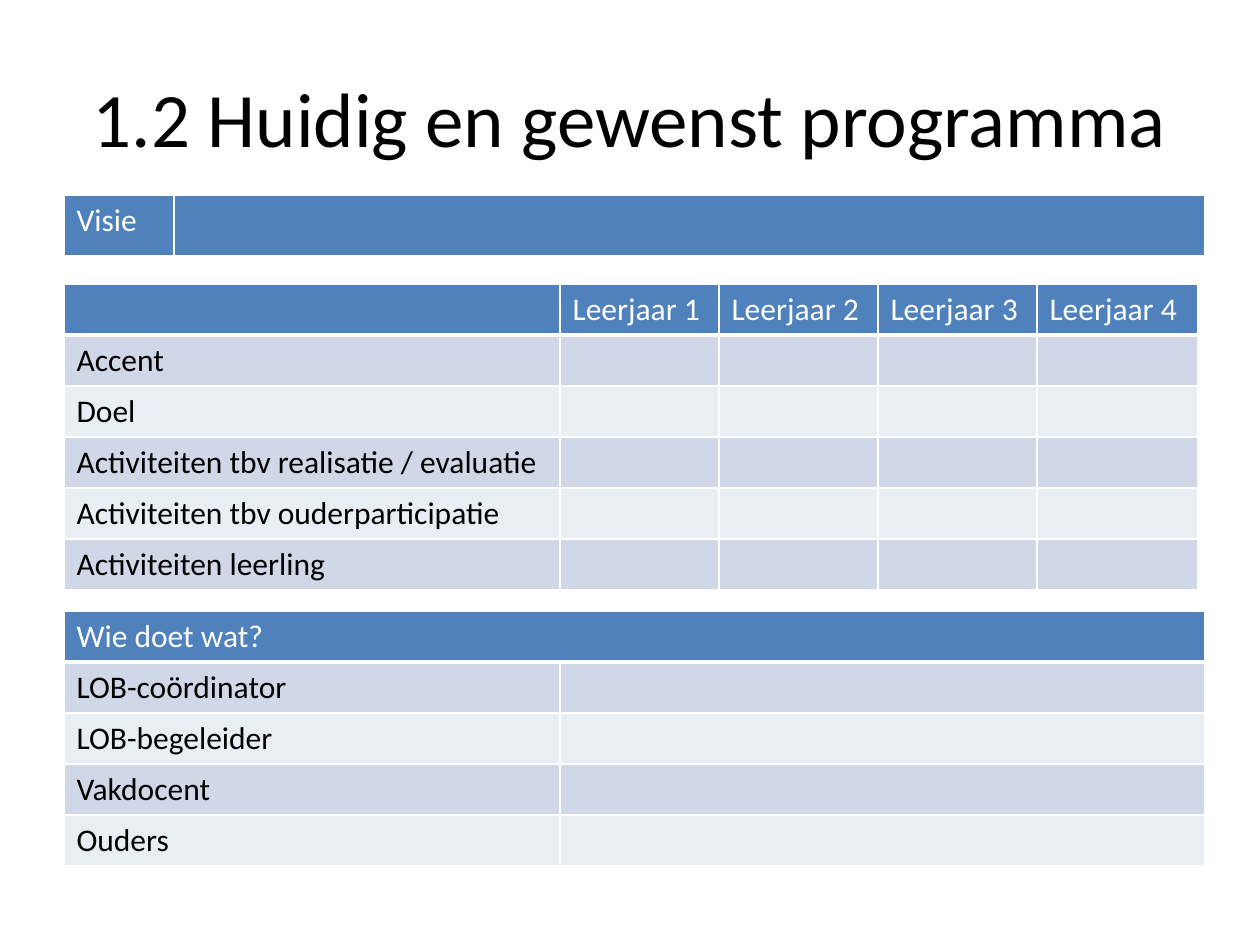
from lxml.etree import SubElement
from pptx import Presentation
from pptx.dml.color import RGBColor
from pptx.enum.text import MSO_ANCHOR, PP_ALIGN
from pptx.oxml.ns import qn
from pptx.util import Emu, Pt

PX = 914400 // 126
FONT = "Calibri"
BLACK = RGBColor(0, 0, 0)
WHITE = RGBColor(0xFF, 0xFF, 0xFF)
BLUE = RGBColor(0x4F, 0x81, 0xBD)
BANDS = (RGBColor(0xD0, 0xD8, 0xE8), RGBColor(0xE9, 0xED, 0xF4))


def px(n):
    """Turn whole pixels into EMU."""
    return Emu(n * PX)


def style(p, size, color):
    """Set the font of one paragraph."""
    p.font.name = FONT
    p.font.size = Pt(size)
    p.font.bold = False
    p.font.color.rgb = color


def add_borders(cell, bottom):
    """Draw white cell borders, with the bottom one in the given points."""
    tc_pr = cell._tc.get_or_add_tcPr()
    widths = (("a:lnL", 1), ("a:lnR", 1), ("a:lnT", 1), ("a:lnB", bottom))
    for i, (tag, width) in enumerate(widths):
        ln = tc_pr.makeelement(qn(tag), {"w": str(Pt(width))})
        fill = SubElement(ln, qn("a:solidFill"))
        SubElement(fill, qn("a:srgbClr"), {"val": str(WHITE)})
        tc_pr.insert(i, ln)


def add_title(s, text, x, y, w, h):
    """Place the centred slide title."""
    tf = s.shapes.add_textbox(px(x), px(y), px(w), px(h)).text_frame
    tf.word_wrap = True
    tf.vertical_anchor = MSO_ANCHOR.MIDDLE
    p = tf.paragraphs[0]
    p.text = text
    p.alignment = PP_ALIGN.CENTER
    style(p, 44, BLACK)


def add_grid(s, rows, x, y, widths, row_h, merge_header=False):
    """Place a table with a blue header row and banded rows below it."""
    frame = s.shapes.add_table(len(rows), len(widths), px(x), px(y),
                               px(sum(widths)), px(row_h * len(rows)))
    table = frame.table
    for col, w in zip(table.columns, widths):
        col.width = px(w)
    for i, texts in enumerate(rows):
        table.rows[i].height = px(row_h)
        for j in range(len(widths)):
            cell = table.cell(i, j)
            cell.fill.solid()
            cell.fill.fore_color.rgb = BANDS[(i - 1) % 2] if i else BLUE
            add_borders(cell, 1 if i else 3)
            p = cell.text_frame.paragraphs[0]
            p.text = texts[j] if j < len(texts) else ""
            style(p, 18, BLACK if i else WHITE)
    if merge_header:
        table.cell(0, 0).merge(table.cell(0, len(widths) - 1))


def main():
    """Build the slide and save it."""
    prs = Presentation()
    prs.slide_width, prs.slide_height = px(1260), px(945)
    s = prs.slides.add_slide(prs.slide_layouts[6])
    add_title(s, "1.2 Huidig en gewenst programma", 63, 38, 1134, 157)
    years = [f"Leerjaar {n}" for n in range(1, 5)]
    topics = ["Accent", "Doel", "Activiteiten tbv realisatie / evaluatie",
              "Activiteiten tbv ouderparticipatie", "Activiteiten leerling"]
    add_grid(s, [["", *years]] + [[t] for t in topics],
             64, 284, [496, 159, 159, 159, 161], 51)
    add_grid(s, [["Visie"]], 64, 195, [110, 1031], 62)
    roles = ["Wie doet wat?", "LOB-coördinator", "LOB-begeleider", "Vakdocent", "Ouders"]
    add_grid(s, [[r] for r in roles], 64, 611, [496, 645], 51, merge_header=True)
    prs.save("out.pptx")


if __name__ == "__main__":
    main()
